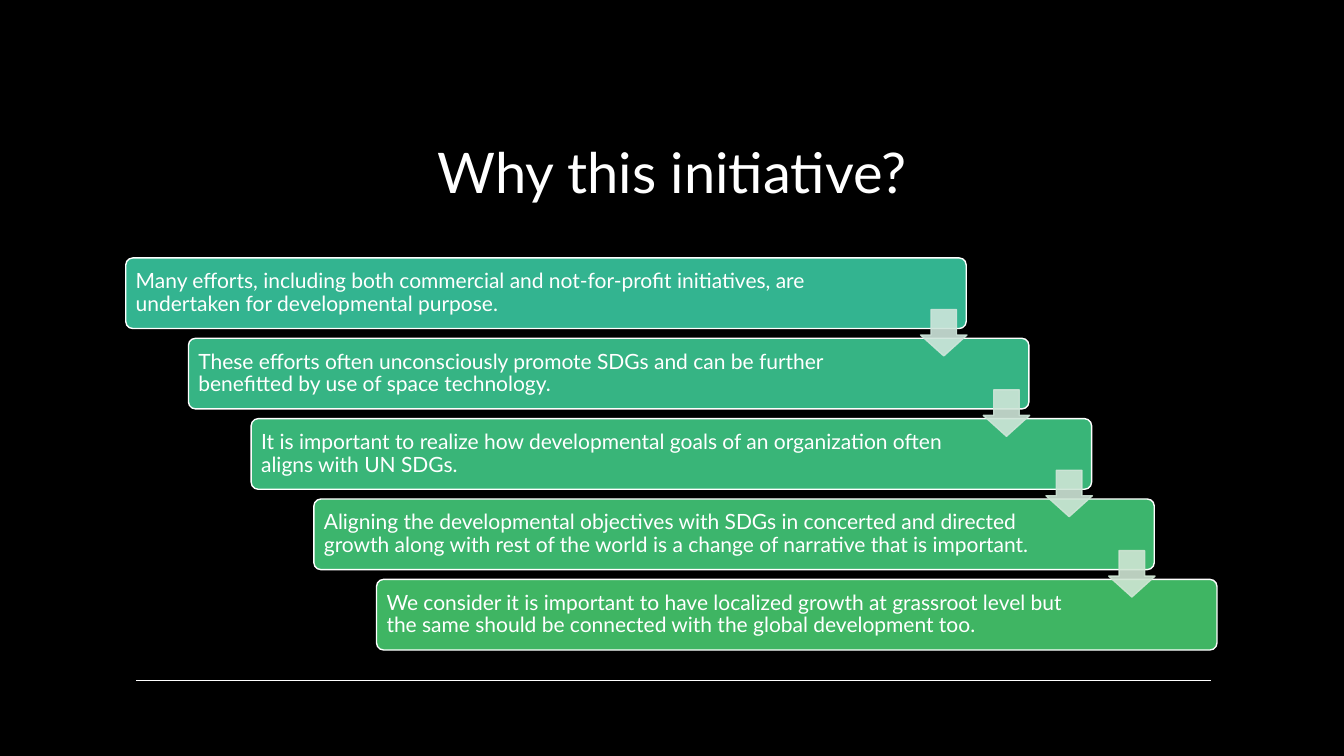
"""Build the slide that gives five reasons for the initiative as descending steps."""
from lxml import etree
from pptx import Presentation
from pptx.dml.color import RGBColor
from pptx.enum import shapes as kinds, text as txt
from pptx.oxml.ns import qn
from pptx.util import Cm, Pt

HUES = {
    "back": "000000",
    "white": "FFFFFF",
    "bars": ["33B490", "36B484", "39B578", "3CB56D", "3FB563"],
    "arrows": ["CEE5DB", "CEE5D8", "CEE5D6", "CFE5D3"],
}
STEPS = [
    "Many efforts, including both commercial and not-for-profit initiatives, are undertaken for developmental purpose.",
    "These efforts often unconsciously promote SDGs and can be further benefitted by use of space technology.",
    "It is important to realize how developmental goals of an organization often aligns with UN SDGs.",
    "Aligning the developmental objectives with SDGs in concerted and directed growth along with rest of the world is a change of narrative that is important.",
    "We consider it is important to have localized growth at grassroot level but the same should be connected with the global development too.",
]
DX, DY = 1.58, 2.025


def write(shape, words, size, align, anchor, space=None):
    frame = shape.text_frame
    frame.word_wrap = True
    frame.auto_size = txt.MSO_AUTO_SIZE.NONE
    frame.vertical_anchor = anchor
    para = frame.paragraphs[0]
    para.alignment = align
    para.line_spacing = space
    run = para.add_run()
    run.text = words
    run.font.name = "Lato"
    run.font.size = Pt(size)
    run.font.color.rgb = RGBColor.from_string(HUES["white"])
    return frame


def add(kind, left, top, width, height, fill, line):
    shape = slide.shapes.add_shape(kind, Cm(left), Cm(top), Cm(width), Cm(height))
    shape.shadow.inherit = False
    shape.fill.solid()
    shape.fill.fore_color.rgb = RGBColor.from_string(fill)
    shape.line.color.rgb = RGBColor.from_string(line)
    shape.line.width = Pt(1)
    return shape


deck = Presentation()
deck.slide_width, deck.slide_height = Cm(33.87), Cm(19.05)
slide = deck.slides.add_slide(deck.slide_layouts[5])
slide.background.fill.solid()
slide.background.fill.fore_color.rgb = RGBColor.from_string(HUES["back"])

title = slide.shapes.title
title.left, title.top, title.width, title.height = Cm(4.87), Cm(2.52), Cm(24.13), Cm(2.79)
write(title, "Why this initiative?", 40, txt.PP_ALIGN.CENTER, txt.MSO_ANCHOR.BOTTOM, space=0.9)

rule = slide.shapes.add_connector(kinds.MSO_CONNECTOR.STRAIGHT, Cm(3.43), Cm(17.14), Cm(30.53), Cm(17.14))
rule.line.color.rgb = RGBColor.from_string(HUES["white"])
rule.line.width = Pt(1)
etree.SubElement(rule._element.spPr, qn("a:effectLst"))

for i, (words, hue) in enumerate(zip(STEPS, HUES["bars"])):
    bar = add(kinds.MSO_SHAPE.ROUNDED_RECTANGLE, 3.17 + i * DX, 6.5 + i * DY, 21.18, 1.78, hue, HUES["white"])
    bar.adjustments[0] = 0.1
    frame = write(bar, words, 15, txt.PP_ALIGN.LEFT, txt.MSO_ANCHOR.MIDDLE, space=0.9)
    frame.margin_left, frame.margin_right = Cm(0.2), Cm(2.95)
    frame.margin_top = frame.margin_bottom = Cm(0.2)

for i, hue in enumerate(HUES["arrows"]):
    arrow = add(kinds.MSO_SHAPE.DOWN_ARROW, 23.2 + i * DX, 7.8 + i * DY, 1.17, 1.17, hue, hue)
    arrow.adjustments[0], arrow.adjustments[1] = 0.55, 0.45
    for tint in arrow._element.spPr.iter(qn("a:srgbClr")):
        etree.SubElement(tint, qn("a:alpha"), val="90000")

deck.save("out.pptx")
